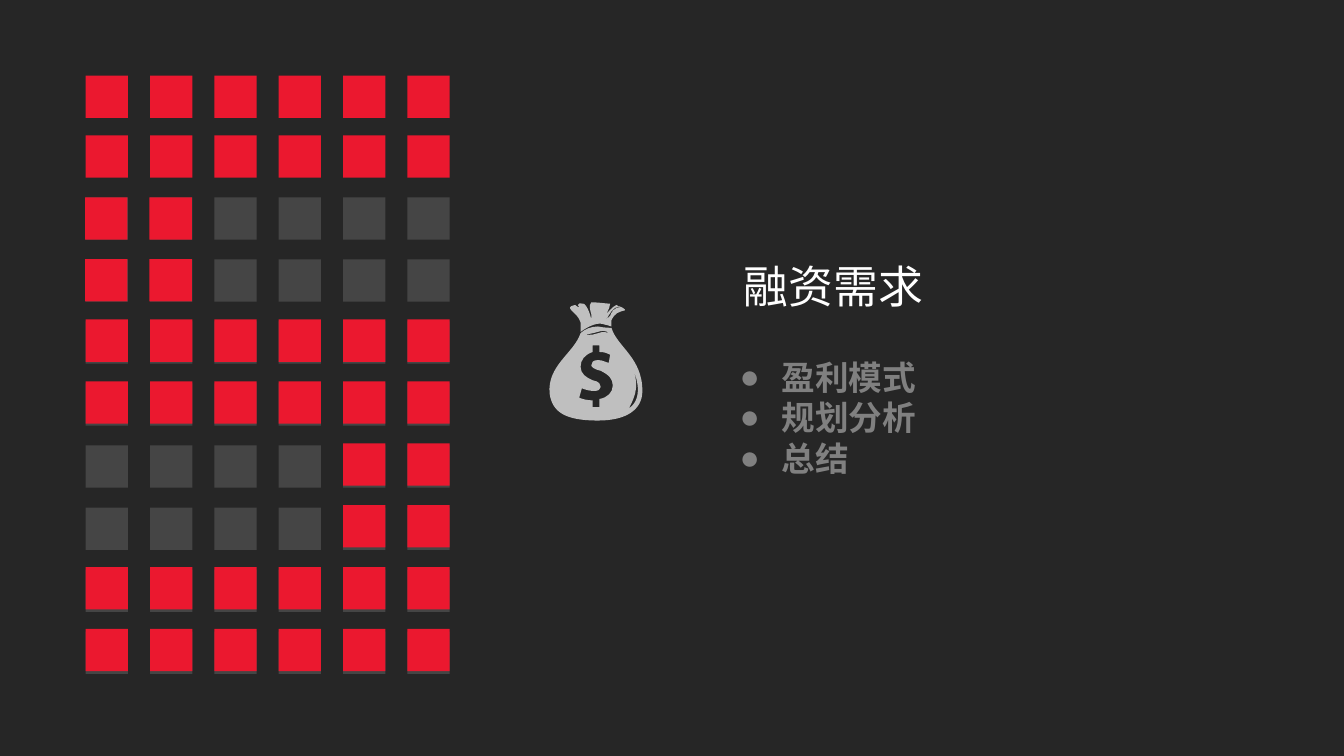
"""Build the financing needs slide: a tile figure, a money bag and a short agenda."""
from dataclasses import dataclass

from lxml.etree import SubElement
from pptx import Presentation
from pptx.dml.color import RGBColor
from pptx.enum.shapes import MSO_SHAPE as Preset
from pptx.enum.text import MSO_AUTO_SIZE as AutoSize
from pptx.oxml.ns import qn
from pptx.util import Cm, Pt


@dataclass(frozen=True)
class Theme:
    background: str = "262626"
    tile_off: str = "454545"
    tile_on: str = "EB182F"
    bag: str = "BFBFBF"
    title: str = "FFFFFF"
    agenda: str = "808080"
    font: str = "Arial"
    title_size: int = 24
    agenda_size: int = 18


theme = Theme()


def paint(shape, color):
    shape.shadow.inherit = False
    shape.fill.solid()
    shape.fill.fore_color.rgb = RGBColor.from_string(color)
    shape.line.fill.background()


def control_points(start, segments):
    unit = Cm(0.0254)
    values = [*start]
    for segment in segments:
        values.extend(segment * 3 if len(segment) == 2 else segment)
    return [(x * unit, y * unit) for x, y in zip(values[::2], values[1::2])]


deck = Presentation()
deck.slide_width, deck.slide_height = Cm(25.4), Cm(14.29)
page = deck.slides.add_slide(deck.slide_layouts[6])
page.background.fill.solid()
page.background.fill.fore_color.rgb = RGBColor.from_string(theme.background)

columns, grid_left, grid_width, tile_size = 6, 1.62, 6.08, 0.8
off_rows = [(3.73 + 8.21 * row / 7, grid_left, 0, columns) for row in range(8)]
on_rows = [
    (1.43, grid_left, 0, 6), (2.56, grid_left, 0, 6),
    (3.73, 1.61, 0, 2), (4.9, 1.61, 0, 2),
    (6.04, grid_left, 0, 6), (7.21, grid_left, 0, 6),
    (8.38, grid_left, 4, 6), (9.55, grid_left, 4, 6),
    (10.72, grid_left, 0, 6), (11.89, grid_left, 0, 6),
]
for rows, color in ((off_rows, theme.tile_off), (on_rows, theme.tile_on)):
    tiles = page.shapes.add_group_shape()
    for top, left, first, last in rows:
        for column in range(first, last):
            x = left + grid_width * column / (columns - 1)
            tile = tiles.shapes.add_shape(Preset.RECTANGLE, Cm(x), Cm(top), Cm(tile_size), Cm(tile_size))
            paint(tile, color)

sack = [
    ((409, 293), [(411, 307, 421, 313, 445, 313), (466, 313, 478, 305, 478, 291),
                  (478, 266, 459, 258, 455, 244), (453, 244, 450, 244, 445, 243),
                  (440, 243, 435, 245, 432, 248), (427, 263, 407, 272, 409, 293)]),
    ((471, 275), [(471, 275, 481, 295, 468, 304), (470, 299, 477, 290, 471, 275)]),
    ((445, 247), [(451, 245, 453, 248, 453, 248), (453, 248), (453, 248, 449, 246, 445, 248),
                  (440, 250, 435, 249, 435, 249), (435, 249, 438, 249, 445, 247)]),
    ((433, 289), [(435, 290, 439, 291, 442, 291), (445, 291, 447, 290, 447, 288),
                  (447, 286, 446, 284, 441, 283), (436, 281, 432, 278, 432, 273),
                  (432, 268, 435, 264, 441, 262), (441, 257), (446, 257), (446, 262),
                  (450, 262, 452, 263, 454, 264), (453, 270),
                  (451, 270, 449, 268, 445, 268), (441, 268, 440, 270, 440, 272),
                  (440, 273, 442, 275, 447, 276), (453, 279, 456, 282, 456, 287),
                  (456, 292, 452, 296, 446, 297), (446, 303), (441, 303), (441, 298),
                  (437, 298, 433, 297, 431, 296)]),
]
knot = [
    ((428, 227), [(418, 229, 430, 232, 432, 240), (432, 243, 432, 245, 432, 247),
                  (436, 244, 443, 240, 448, 241), (451, 242, 453, 242, 455, 243),
                  (455, 242, 455, 241, 455, 239), (455, 239, 454, 239, 457, 235),
                  (459, 232, 465, 231, 465, 231), (465, 231, 466, 230, 461, 228),
                  (461, 228), (461, 228, 461, 228, 460, 228), (460, 228, 460, 227, 459, 227),
                  (458, 227, 455, 229, 451, 234), (453, 230, 454, 228, 454, 226),
                  (451, 226, 446, 225, 441, 225), (441, 225), (441, 225),
                  (441, 225, 441, 225, 440, 225),
                  (439, 226, 438, 227, 440, 234), (440, 237, 440, 237, 441, 238),
                  (439, 237, 440, 236, 439, 234), (437, 228, 435, 226, 434, 226),
                  (432, 226, 430, 225, 430, 227), (433, 231, 428, 227, 428, 227)]),
    ((458, 229), [(459, 228, 463, 229, 463, 229), (456, 228, 455, 233, 454, 235),
                  (451, 238, 450, 238, 450, 238), (453, 237, 453, 232, 458, 229)]),
]
money_bag = page.shapes.add_group_shape()
for contours in (sack, knot):
    outlines = [control_points(*contour) for contour in contours]
    builder = money_bag.shapes.build_freeform(*outlines[0][0])
    for number, outline in enumerate(outlines):
        if number:
            builder.move_to(*outline[0])
        builder.add_line_segments(outline[1:], close=False)
    part = builder.convert_to_shape()
    lines = list(part._element.iter(qn("a:lnTo")))
    for first, second, third in zip(lines[::3], lines[1::3], lines[2::3]):
        curve = SubElement(first.getparent(), qn("a:cubicBezTo"))
        first.addprevious(curve)
        for line in (first, second, third):
            curve.append(line[0])
            line.getparent().remove(line)
    paint(part, theme.bag)

texts = [
    ((13.81, 4.77, 4.14, 1.3), ["融资需求"], theme.title, False,
     {"name": theme.font, "size": Pt(theme.title_size)}),
    ((13.73, 6.62, 6.2, 3.33), ["盈利模式", "规划分析", "总结"], theme.agenda, True,
     {"name": theme.font, "size": Pt(theme.agenda_size), "bold": True}),
]
for place, lines, color, bulleted, formats in texts:
    box = page.shapes.add_textbox(*map(Cm, place))
    frame = box.text_frame
    frame.word_wrap = True
    frame.auto_size = AutoSize.SHAPE_TO_FIT_TEXT
    for number, line in enumerate(lines):
        para = frame.add_paragraph() if number else frame.paragraphs[0]
        span = para.add_run()
        span.text = line
        span.font.color.rgb = RGBColor.from_string(color)
        for name, value in formats.items():
            setattr(span.font, name, value)
        if bulleted:
            properties = para._p.get_or_add_pPr()
            properties.set("marL", str(Cm(0.79)))
            properties.set("indent", str(-Cm(0.79)))
            SubElement(properties, qn("a:buFont")).set("typeface", theme.font)
            SubElement(properties, qn("a:buChar")).set("char", "●")

deck.save("out.pptx")
